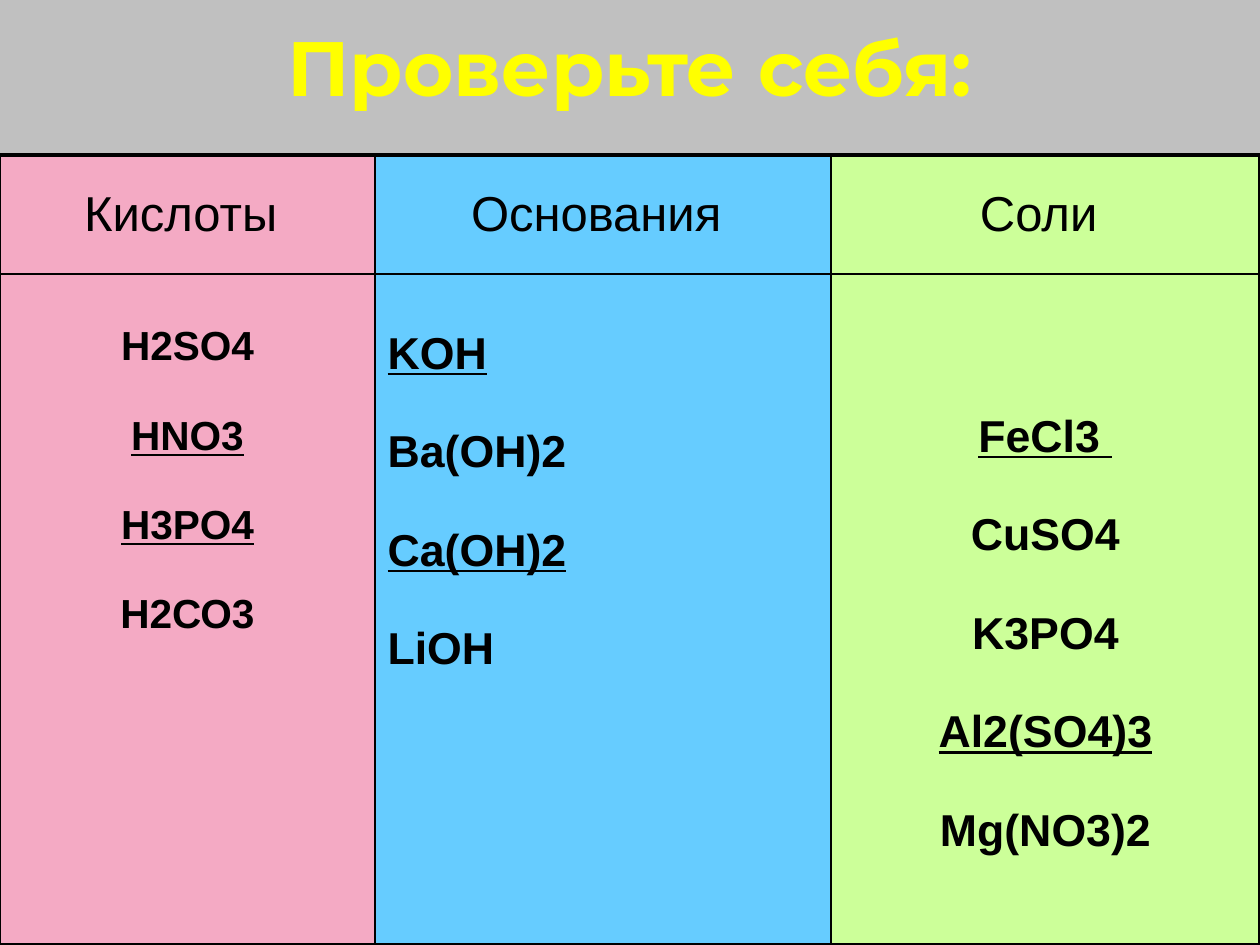
from dataclasses import dataclass

import lxml.etree
import pptx
import pptx.dml.color
import pptx.enum.text
import pptx.oxml.ns
import pptx.util

ALIGN = pptx.enum.text.PP_ALIGN
ANCHOR = pptx.enum.text.MSO_ANCHOR


@dataclass(frozen=True)
class Theme:
    background: str = "C0C0C0"
    title: str = "FFFF00"
    ink: str = "000000"
    acids: str = "F4AAC4"
    bases: str = "66CCFF"
    salts: str = "CCFF99"
    title_font: str = "Montserrat"
    body_font: str = "Arial"
    title_size: int = 44
    header_size: int = 28
    acid_size: int = 40
    formula_size: int = 44
    subscript: int = -25000
    thin: float = 1
    thick: float = 2.25


THEME = Theme()
COLUMN_WIDTHS = (375, 456, 429)
ROW_HEIGHTS = (119, 671)
TABLE_TOP = 155
COLUMNS = (
    dict(name="Кислоты ", fill=THEME.acids, size=THEME.acid_size,
         align=ALIGN.CENTER, anchor=ANCHOR.TOP,
         formulas=(("H2SО4", False), ("HNO3", True), ("H3PO4", True), ("H2СО3", False))),
    dict(name="Основания ", fill=THEME.bases, size=THEME.formula_size,
         align=ALIGN.LEFT, anchor=ANCHOR.TOP,
         formulas=(("KOH", True), ("Ba(OH)2", False), ("Ca(OH)2", True), ("LiOH", False))),
    dict(name="Соли ", fill=THEME.salts, size=THEME.formula_size,
         align=ALIGN.CENTER, anchor=ANCHOR.MIDDLE,
         formulas=(("FeCl3 ", True), ("CuSO4", False), ("K3PO4", False),
                   ("Al2(SO4)3", True), ("Mg(NO3)2", False))),
)


def px(count):
    return pptx.util.Emu(round(count * 914400 / 126))


def rgb(color):
    return pptx.dml.color.RGBColor.from_string(color)


def write(para, text, *, size, font=THEME.body_font, color=THEME.ink, bold=False,
          underline=False, align=ALIGN.CENTER, baseline=None):
    para.alignment = align
    span = para.add_run()
    span.text = text
    span.font.size = pptx.util.Pt(size)
    span.font.name = font
    span.font.bold = bold
    span.font.underline = underline
    span.font.color.rgb = rgb(color)
    if baseline is not None:
        span.font._element.set("baseline", str(baseline))


def add_border(cell, side, width):
    qn = pptx.oxml.ns.qn
    properties = cell._tc.get_or_add_tcPr()
    line = lxml.etree.SubElement(properties, qn(f"a:ln{side}"), w=str(pptx.util.Pt(width)))
    fill = lxml.etree.SubElement(line, qn("a:solidFill"))
    lxml.etree.SubElement(fill, qn("a:srgbClr"), val=THEME.ink)


def style_cell(cell, fill, anchor, widths):
    for side, width in widths.items():
        add_border(cell, side, width)
    cell.fill.solid()
    cell.fill.fore_color.rgb = rgb(fill)
    cell.vertical_anchor = anchor


def add_title(page, text):
    title = page.shapes.title
    title.left, title.top, title.width, title.height = map(px, (63, 26, 1134, 79))
    title.text_frame.vertical_anchor = ANCHOR.MIDDLE
    write(title.text_frame.paragraphs[0], text, size=THEME.title_size,
          font=THEME.title_font, color=THEME.title, bold=True)


def add_formulas(cell, column):
    frame = cell.text_frame
    for index, (formula, underline) in enumerate(column["formulas"]):
        para = frame.add_paragraph() if index else frame.paragraphs[0]
        write(para, formula, size=column["size"], bold=True, underline=underline,
              align=column["align"], baseline=THEME.subscript)


def add_substance_table(page):
    """Draw one coloured column per class of substance."""
    table = page.shapes.add_table(
        len(ROW_HEIGHTS), len(COLUMNS), px(0), px(TABLE_TOP),
        px(sum(COLUMN_WIDTHS)), px(sum(ROW_HEIGHTS))).table
    table.first_row = table.horz_banding = False
    for row, height in zip(table.rows, ROW_HEIGHTS):
        row.height = px(height)
    for index, (column, width) in enumerate(zip(COLUMNS, COLUMN_WIDTHS)):
        table.columns[index].width = px(width)
        header, body = table.cell(0, index), table.cell(1, index)
        right = THEME.thick if column is COLUMNS[-1] else THEME.thin
        sides = dict(L=THEME.thin, R=right)
        style_cell(header, column["fill"], ANCHOR.MIDDLE,
                   dict(sides, T=THEME.thick, B=THEME.thin))
        style_cell(body, column["fill"], column["anchor"],
                   dict(sides, T=THEME.thin, B=THEME.thick))
        write(header.text_frame.paragraphs[0], column["name"], size=THEME.header_size)
        add_formulas(body, column)


def main():
    deck = pptx.Presentation()
    deck.slide_width, deck.slide_height = px(1260), px(945)
    page = deck.slides.add_slide(deck.slide_layouts.get_by_name("Title Only"))
    page.background.fill.solid()
    page.background.fill.fore_color.rgb = rgb(THEME.background)
    add_title(page, "Проверьте себя:")
    add_substance_table(page)
    deck.save("out.pptx")


if __name__ == "__main__":
    main()
